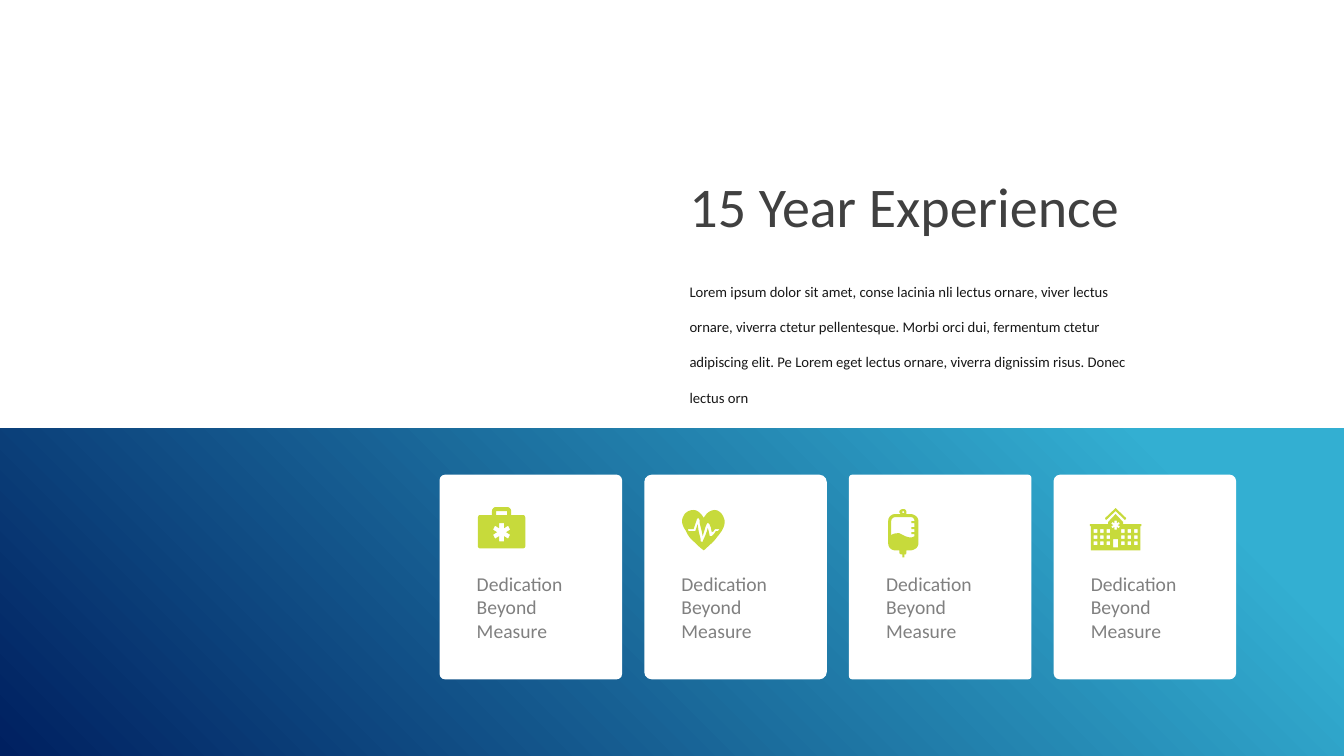
from dataclasses import dataclass
from itertools import product
from lxml.etree import SubElement
from pptx import Presentation
from pptx.dml.color import RGBColor
from pptx.enum.shapes import MSO_SHAPE
from pptx.enum.text import MSO_AUTO_SIZE
from pptx.oxml.ns import qn
from pptx.util import Inches, Pt


@dataclass(frozen=True)
class Theme:
    """Colours, font and type sizes."""
    font: str = "Calibri"
    dark: str = "002060"
    light: str = "33AFD2"
    white: str = "FFFFFF"
    lime: str = "C7DA3B"
    head: tuple = (40, "404040")
    body: tuple = (10.5, "181818")
    label: tuple = (14, "808080")


THEME = Theme()
COLS, ROWS = 1333, 750
CELL = Inches(0.01)
FINE = 10
CARD_X, CARD_Y, CARD_W, CARD_H, PITCH = 436, 471, 181, 203, 203
ROUND = (0.029, 0.04, 0.018, 0.034)
LABEL = "Dedication Beyond Measure"
BODY = ("Lorem ipsum dolor sit amet, conse lacinia nli lectus ornare, viver lectus ornare, "
        "viverra ctetur pellentesque. Morbi orci dui, fermentum ctetur adipiscing elit. "
        "Pe Lorem eget lectus ornare, viverra dignissim risus. Donec lectus orn")


def tint(fill, color):
    """Make a fill solid in one colour."""
    fill.solid()
    fill.fore_color.rgb = RGBColor.from_string(color)


def plain(shape):
    """Remove the line and the shadow of a shape."""
    shape.line.fill.background()
    shape.shadow.inherit = False


def box(shapes, kind, *cells):
    """Add a plain preset shape on grid cells."""
    shape = shapes.add_shape(kind, *(n * CELL for n in cells))
    plain(shape)
    return shape


def write(shapes, text, style, *cells, space=None):
    """Add a wrapped text box on grid cells."""
    size, color = style
    frame = shapes.add_textbox(*(n * CELL for n in cells)).text_frame
    frame.word_wrap = True
    frame.auto_size = MSO_AUTO_SIZE.SHAPE_TO_FIT_TEXT
    frame.text = text
    line = frame.paragraphs[0]
    line.line_spacing = space
    font = line.runs[0].font
    font.name, font.size = THEME.font, Pt(size)
    font.color.rgb = RGBColor.from_string(color)


def band(shapes):
    """Add the lower band, shaded from its top right corner."""
    shape = box(shapes, MSO_SHAPE.RECTANGLE, 0, 425, COLS, ROWS - 425)
    shape.fill.gradient()
    marks = ((0.12, THEME.light), (1, THEME.dark))
    for stop, (place, color) in zip(shape.fill.gradient_stops, marks):
        stop.position = place
        stop.color.rgb = RGBColor.from_string(color)
    grad = shape._element.spPr.find(qn("a:gradFill"))
    grad.remove(grad.find(qn("a:lin")))
    ring = SubElement(grad, qn("a:path"), path="circle")
    SubElement(ring, qn("a:fillToRect"), l="100000", b="100000")


def bend(nodes):
    """Turn corners (x, y) and cubic curves (six numbers) into fine points."""
    points = []
    for node in nodes:
        if len(node) == 2:
            points.append(node)
            continue
        curve = [points[-1], node[:2], node[2:4], node[4:]]
        for step in range(1, 9):
            t = step / 8
            parts = ((1 - t) ** 3, 3 * t * (1 - t) ** 2, 3 * t * t * (1 - t), t ** 3)
            points.append(tuple(sum(p * c[i] for p, c in zip(parts, curve)) for i in (0, 1)))
    return [(x * FINE, y * FINE) for x, y in points]


def trace(shapes, left, top, paths):
    """Add one lime outline, where inner paths are holes."""
    first, *rest = [bend(path) for path in paths]
    pen = shapes.build_freeform(*first[0], scale=CELL / FINE)
    pen.add_line_segments(first[1:], close=True)
    for path in rest:
        pen.move_to(*path[0])
        pen.add_line_segments(path[1:], close=True)
    shape = pen.convert_to_shape(left * CELL, top * CELL)
    tint(shape.fill, THEME.lime)
    plain(shape)


def pane(x, y, w, h):
    """Give the corners of a rectangle."""
    return [(x, y), (x + w, y), (x + w, y + h), (x, y + h)]


def star(x, y, size):
    """Give a six-armed medical star around a centre."""
    half = [(2.5, -9), (2.5, -4), (6.5, -6.5), (8.5, -2.5), (4.5, 0),
            (8.5, 2.5), (6.5, 6.5), (2.5, 4), (2.5, 9)]
    return [(x + sign * size * a, y + sign * size * b) for sign in (1, -1) for a, b in half]


def case():
    """Give the first aid case."""
    shell = [(45, 8), (33, 8), (33, 4), (33, 2, 31, 0, 29, 0), (18, 0), (16, 0, 14, 2, 14, 4),
             (14, 8), (2, 8), (1, 8, 0, 9, 0, 11), (0, 39), (0, 40, 1, 41, 2, 41),
             (45, 41), (46, 41, 47, 40, 47, 39), (47, 11), (47, 9, 46, 8, 45, 8)]
    return [(38, 32, [shell, pane(18, 4, 11, 4), star(23.5, 25, 1)])]


def heart():
    """Give the heart with its pulse."""
    rim = [(21, 40), (24, 38, 26, 35, 29, 33), (32, 30, 35, 26, 38, 22),
           (41, 18, 43, 12, 41, 8), (40, 4, 36, 0, 32, 0), (27, 0, 23, 4, 21, 8),
           (19, 4, 15, 0, 11, 0), (6, 0, 2, 3, 1, 6), (-2, 11, 0, 16, 3, 20),
           (5, 25, 8, 29, 12, 32), (15, 35, 18, 38, 21, 40)]
    pulse = [(11, 19), (13, 13), (14, 10), (14, 9, 15, 8, 16, 8), (17, 10), (17, 13), (19, 21),
             (20, 26), (23, 16), (24, 14), (24, 14, 24, 13, 25, 13), (26, 13, 27, 14, 27, 15),
             (28, 17), (29, 22), (31, 21), (31, 20, 32, 20, 32, 19), (37, 19),
             (36, 20, 36, 20, 35, 21), (33, 21), (32, 23, 31, 24, 29, 26), (27, 26), (26, 21),
             (25, 18), (24, 22, 22, 27, 20, 31), (20, 32), (18, 31), (18, 29), (16, 21),
             (15, 14), (13, 20), (13, 20, 13, 21, 12, 21), (6, 21), (5, 19)]
    return [(38, 35, [rim, pulse])]


def drip():
    """Give the infusion bag."""
    rim = [(22, 5), (18, 5), (18, 4, 18, 4, 18, 3), (18, 1, 17, 0, 15, 0),
           (13, 0, 11, 1, 11, 3), (11, 4, 12, 4, 12, 5), (7, 5), (3, 5, 0, 8, 0, 12),
           (0, 34), (0, 38, 3, 41, 7, 41), (11, 41), (11, 43), (11, 44, 12, 45, 13, 45),
           (14, 45), (14, 48), (16, 48), (16, 45), (17, 45), (18, 45, 18, 44, 18, 43),
           (18, 41), (22, 41), (26, 41, 30, 38, 30, 34), (30, 12), (30, 8, 26, 5, 22, 5)]
    space = [(7, 8), (22, 8), (25, 8, 26, 10, 26, 12), (23, 12), (23, 14), (26, 14), (26, 18),
             (23, 18), (23, 20), (26, 20), (26, 23), (23, 23), (23, 25), (26, 25), (26, 27),
             (23, 29, 20, 28, 17, 27), (15, 26, 13, 25, 11, 24), (9, 24, 5, 24, 3, 26),
             (3, 12), (3, 10, 5, 8, 7, 8)]
    eye = [(15, 2), (15, 2, 16, 3, 16, 3), (16, 4, 15, 4, 15, 4), (14, 4, 14, 4, 14, 3),
           (14, 3, 14, 2, 15, 2)]
    return [(39, 34, [rim, space, eye])]


def clinic():
    """Give the clinic and its roof."""
    wall = [(33, 10), (33, 8), (25.5, 0), (18, 8), (18, 10), (0, 10), (0, 12), (1, 12),
            (1, 36), (50, 36), (50, 12), (51, 12), (51, 10)]
    panes = [pane(side + 6.4 * col, 15 + 6.1 * row, 3.5, 3.6)
             for side, col, row in product((3.8, 31), range(3), range(3))]
    roof = [(10.5, 3), (20, 12), (21, 10), (10.5, 0), (0, 10), (1, 12)]
    return [(36, 39, [wall, pane(23, 25, 5, 8), star(25.5, 11, 0.5), *panes]),
            (51, 33, [roof])]


def card(shapes, left, curve, icon):
    """Add one white card with its icon and label."""
    shape = box(shapes, MSO_SHAPE.ROUNDED_RECTANGLE, left, CARD_Y, CARD_W, CARD_H)
    shape.adjustments[0] = curve
    tint(shape.fill, THEME.white)
    home = shapes.add_group_shape().shapes if len(icon) > 1 else shapes
    for x, y, paths in icon:
        trace(home, left + x, CARD_Y + y, paths)
    write(shapes, LABEL, THEME.label, left + 27, CARD_Y + 91, 118, 81)


def main():
    """Build and save the slide."""
    deck = Presentation()
    deck.slide_width, deck.slide_height = COLS * CELL, ROWS * CELL
    shapes = deck.slides.add_slide(deck.slide_layouts[6]).shapes
    band(shapes)
    write(shapes, "15 Year Experience", THEME.head, 674, 165, 556, 77)
    write(shapes, BODY, THEME.body, 674, 258, 479, 112, space=2.0)
    icons = (case(), heart(), drip(), clinic())
    for i, (curve, icon) in enumerate(zip(ROUND, icons)):
        card(shapes, CARD_X + i * PITCH, curve, icon)
    deck.save("out.pptx")


if __name__ == "__main__":
    main()
